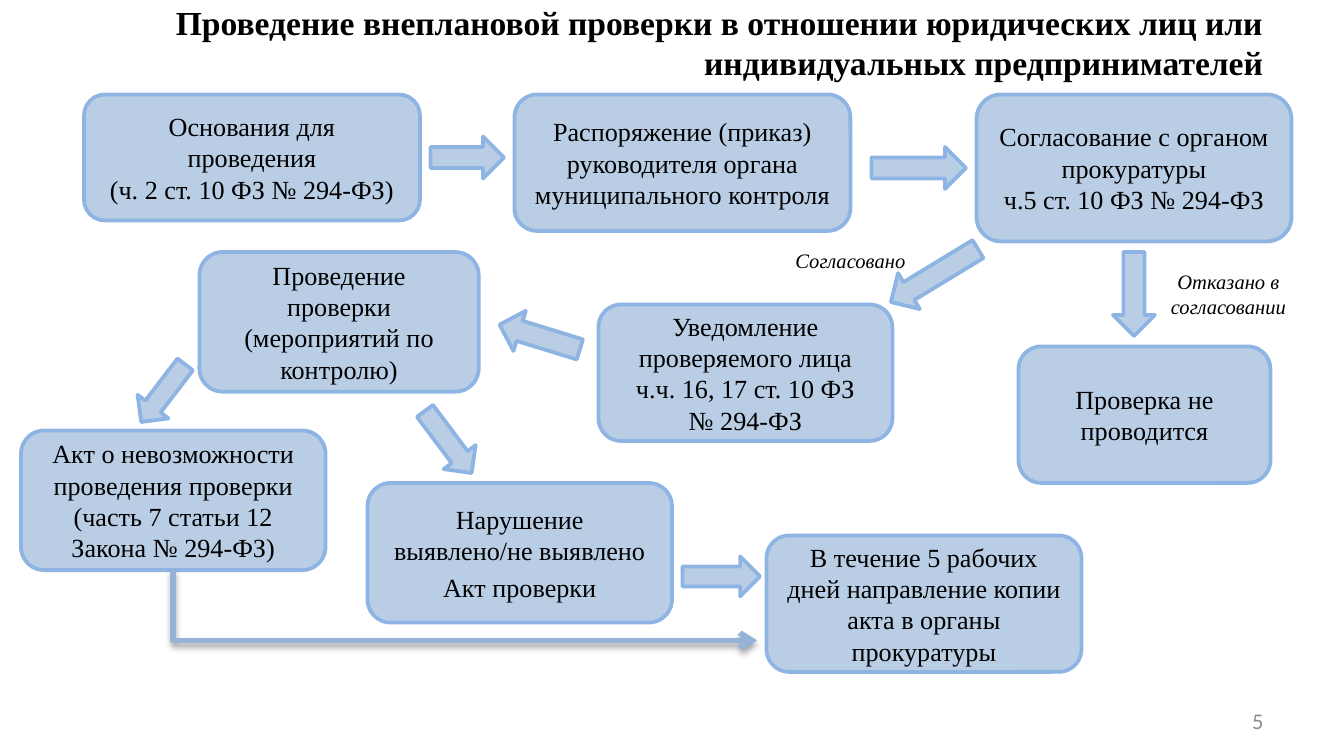
from dataclasses import dataclass

from lxml import etree
from pptx import Presentation
from pptx import util as u
from pptx.dml.color import RGBColor
from pptx.enum import shapes, text
from pptx.oxml import ns

COLUMNS, ROWS = 128, 72
CELL = u.Inches(10) / COLUMNS
KIND = shapes.MSO_SHAPE
ALIGN = text.PP_ALIGN


@dataclass(frozen=True)
class Theme:
    fill: str = "B9CDE5"
    line: str = "8EB4E3"
    link: str = "95B3D7"
    ink: str = "000000"
    muted: str = "8C8C8C"
    font: str = "Times New Roman"
    number_font: str = "Calibri"
    title_size: int = 18
    box_size: int = 14
    number_size: int = 12
    label_size: int = 11
    line_width: int = 2
    link_width: int = 3


THEME = Theme()

# Grid column, row, width, height; then the paragraphs
BOXES = {
    "grounds": (8, 9, 32, 12, ["Основания для проведения", "(ч. 2 ст. 10 ФЗ № 294-ФЗ)"]),
    "inspection": (19, 24, 26.6, 13.3, ["Проведение проверки (мероприятий по контролю)"]),
    "order": (49, 9, 32, 13, ["Распоряжение (приказ) руководителя органа муниципального контроля"]),
    "approval": (93, 9, 30, 14, ["Согласование с органом прокуратуры", "ч.5 ст. 10 ФЗ № 294-ФЗ"]),
    "cancelled": (97, 33, 24, 13, ["Проверка не проводится"]),
    "notice": (57, 29, 28, 13,
               ["Уведомление проверяемого лица", "ч.ч. 16, 17 ст. 10 ФЗ", "№ 294-ФЗ"]),
    "findings": (35, 46, 29, 13.3, ["Нарушение выявлено/не выявлено", "Акт проверки"]),
    "impossible": (2, 41, 29, 13.3,
                   ["Акт о невозможности проведения проверки",
                    "(часть 7 статьи 12 Закона № 294-ФЗ)"]),
    "copy": (73, 51, 30, 13,
             ["В течение 5 рабочих дней направление копии акта в органы прокуратуры"]),
}
PARAGRAPH_GAPS = {"findings": 2.8}

# Shape, grid column, row, width, height, rotation
ARROWS = [
    (KIND.RIGHT_ARROW, 41, 13, 7, 4, 0),
    (KIND.RIGHT_ARROW, 83, 14, 9, 4, 0),
    (KIND.DOWN_ARROW, 106, 24, 4, 8, 0),
    (KIND.DOWN_ARROW, 87, 21.4, 4, 9.7, 58.7),
    (KIND.RIGHT_ARROW, 47.4, 30.1, 8, 4, 197.1),
    (KIND.DOWN_ARROW, 13.7, 34, 3.7, 6.9, 37.4),
    (KIND.DOWN_ARROW, 40.8, 38.4, 3.8, 7.4, 323.1),
    (KIND.DOWN_ARROW, 66.8, 51.2, 3.8, 7.4, 270),
]
LABELS = [
    (74, 23, 14, 3.7, "Согласовано"),
    (110, 25, 14, 6, "Отказано в согласовании"),
]


def grid(*cells):
    return [u.Emu(round(cell * CELL)) for cell in cells]


def color(value):
    return RGBColor.from_string(value)


def write(shape, paragraphs, *, size, font=THEME.font, ink=THEME.ink, bold=False,
          italic=False, align=ALIGN.CENTER, anchor=text.MSO_ANCHOR.MIDDLE, gap=0):
    frame = shape.text_frame
    frame.word_wrap = True
    frame.auto_size = text.MSO_AUTO_SIZE.NONE
    frame.vertical_anchor = anchor
    for index, words in enumerate(paragraphs):
        para = frame.paragraphs[0] if index == 0 else frame.add_paragraph()
        para.alignment = align
        para.space_before = u.Pt(gap if index else 0)
        span = para.add_run()
        span.text = words
        span.font.name = font
        span.font.size = u.Pt(size)
        span.font.bold = bold
        span.font.italic = italic
        span.font.color.rgb = color(ink)


def add_shape(page, kind, *place, rotation=0):
    shape = page.shapes.add_shape(kind, *grid(*place))
    shape.rotation = rotation
    shape.shadow.inherit = False
    shape.fill.solid()
    shape.fill.fore_color.rgb = color(THEME.fill)
    shape.line.color.rgb = color(THEME.line)
    shape.line.width = u.Pt(THEME.line_width)
    return shape


def add_text(page, place, words, **style):
    write(page.shapes.add_textbox(*grid(*place)), [words], **style)


def add_title(page, words):
    title = page.shapes.title
    title.left, title.top, title.width, title.height = grid(6.4, 0, 115.2, 8)
    write(title, [words], size=THEME.title_size, bold=True, align=ALIGN.RIGHT)


def add_corner_link(page, start, end_column, end_row):
    """Run from the bottom of a box down, then right, to a grid point."""
    link = page.shapes.add_connector(
        shapes.MSO_CONNECTOR.ELBOW, 0, 0, *grid(end_column, end_row))
    link.begin_connect(start, 2)
    left, top = link.begin_x, link.begin_y
    end_x, end_y = grid(end_column, end_row)
    across, down = end_x - left, end_y - top
    # A one-corner elbow needs a mirrored frame turned by 270 degrees.
    link.left = u.Emu(left + (across - down) // 2)
    link.top = u.Emu(top + (down - across) // 2)
    link.width, link.height = u.Emu(down), u.Emu(across)
    properties = link._element.spPr
    frame = properties.find(ns.qn("a:xfrm"))
    for flip in ("flipH", "flipV"):
        frame.attrib.pop(flip, None)
    frame.set("rot", str(270 * 60000))
    frame.set("flipH", "1")
    properties.find(ns.qn("a:prstGeom")).set("prst", "bentConnector2")

    link.line.color.rgb = color(THEME.link)
    link.line.width = u.Pt(THEME.link_width)
    etree.SubElement(link.line._get_or_add_ln(), ns.qn("a:tailEnd"), type="arrow")
    effects = etree.SubElement(properties, ns.qn("a:effectLst"))
    shadow = etree.SubElement(
        effects, ns.qn("a:outerShdw"), blurRad=str(u.Pt(3.1)), dist=str(u.Pt(1.8)),
        dir=str(90 * 60000), rotWithShape="0")
    shade = etree.SubElement(shadow, ns.qn("a:srgbClr"), val=THEME.ink)
    etree.SubElement(shade, ns.qn("a:alpha"), val="35000")


def main():
    deck = Presentation()
    deck.slide_width, deck.slide_height = grid(COLUMNS, ROWS)
    page = deck.slides.add_slide(deck.slide_layouts.get_by_name("Title Only"))
    add_title(page, "Проведение внеплановой проверки в отношении юридических лиц "
                    "или индивидуальных предпринимателей")
    add_text(page, (91.8, 66.7, 29.8, 3.8), "5", size=THEME.number_size,
             font=THEME.number_font, ink=THEME.muted, align=ALIGN.RIGHT)

    boxes = {}
    for name, (*place, paragraphs) in BOXES.items():
        boxes[name] = add_shape(page, KIND.ROUNDED_RECTANGLE, *place)
        write(boxes[name], paragraphs, size=THEME.box_size, gap=PARAGRAPH_GAPS.get(name, 0))
    for kind, *place, rotation in ARROWS:
        add_shape(page, kind, *place, rotation=rotation)
    for *place, words in LABELS:
        add_text(page, place, words, size=THEME.label_size, italic=True,
                 anchor=text.MSO_ANCHOR.TOP)
    add_corner_link(page, boxes["impossible"], 72.1, 61)
    deck.save("out.pptx")


if __name__ == "__main__":
    main()
